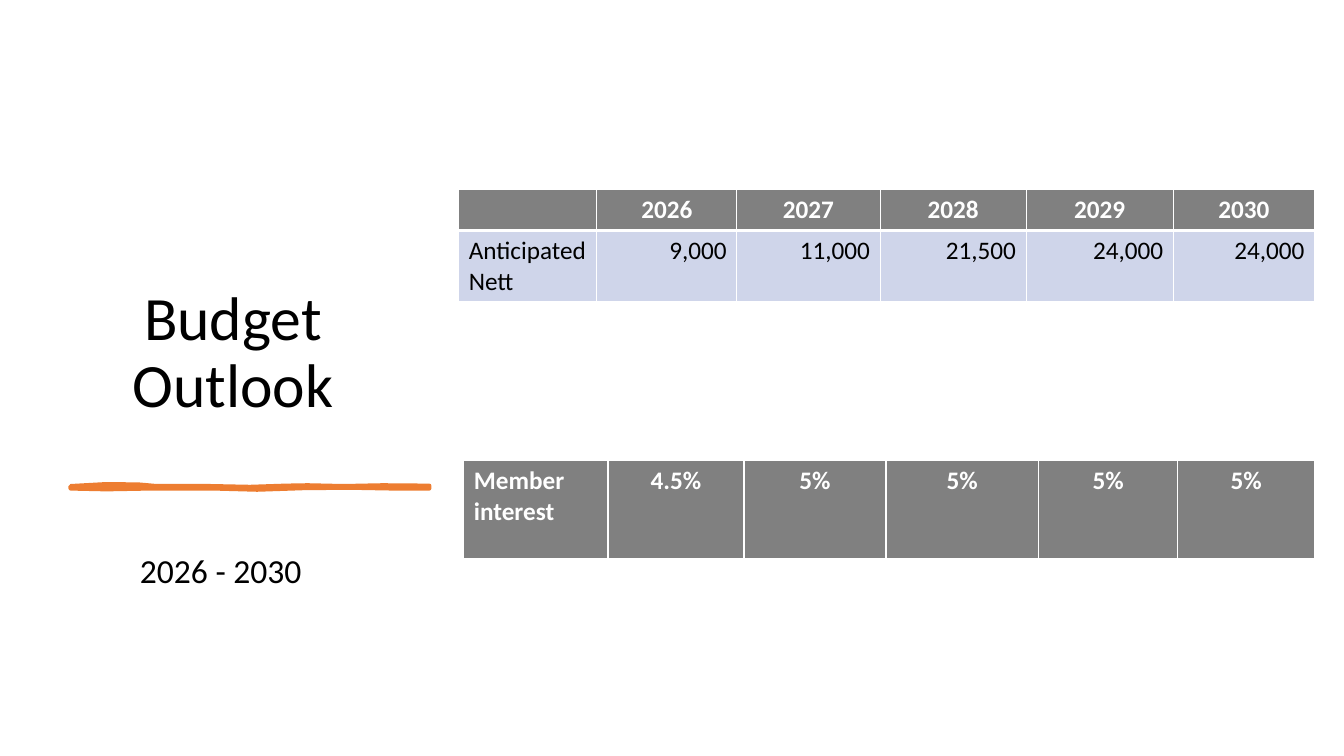
from lxml.etree import SubElement
from pptx import Presentation
from pptx.dml.color import RGBColor
from pptx.enum.text import MSO_ANCHOR, PP_ALIGN
from pptx.oxml.ns import qn
from pptx.util import Cm, Pt

GREY, BLUE, WHITE, BLACK, ORANGE = "808080", "CFD5EA", "FFFFFF", "000000", "ED7D31"
LEFT, MID, RIGHT = PP_ALIGN.LEFT, PP_ALIGN.CENTER, PP_ALIGN.RIGHT


def color(code):
    return RGBColor.from_string(code)


def write(para, text, size, ink, align, bold=False):
    para.alignment = align
    run = para.add_run()
    run.text = text
    font = run.font
    font.name, font.size, font.bold = "Calibri", Pt(size), bold
    font.color.rgb = color(ink)


def label(slide, box, text, size, anchor, lead=1.0):
    frame = slide.shapes.add_textbox(*map(Cm, box)).text_frame
    frame.word_wrap = True
    frame.vertical_anchor = anchor
    para = frame.paragraphs[0]
    para.line_spacing = lead
    write(para, text, size, BLACK, MID)


def stroke(slide, box):
    left, top, width, height = box
    upper = [(0, 0.2), (0.1, -0.4), (0.19, -0.2), (0.24, 0.2), (0.39, 0.2), (0.5, 0.5),
             (0.6, 0.1), (0.66, 0), (0.76, 0.3), (0.87, 0), (1, 0.1)]
    lower = [(1, 1), (0.9, 1), (0.78, 0.8), (0.65, 0.9), (0.52, 1.4), (0.4, 1),
             (0.22, 1), (0.1, 1.2), (0, 1)]
    dots = [((left + x * width) * 100, (top + y * height) * 100) for x, y in upper + lower]
    pen = slide.shapes.build_freeform(*dots[0], scale=3600)
    pen.add_line_segments(dots[1:], close=True)
    shape = pen.convert_to_shape()
    shape.shadow.inherit = False
    shape.fill.solid()
    shape.fill.fore_color.rgb = color(ORANGE)
    shape.line.color.rgb = color(ORANGE)
    shape.line.width = Pt(3)


def border(cell, base):
    props = cell._tc.get_or_add_tcPr()
    for spot, (side, width) in enumerate([("L", 1), ("R", 1), ("T", 1), ("B", base)]):
        line = SubElement(props, qn(f"a:ln{side}"), w=str(Pt(width)))
        fill = SubElement(line, qn("a:solidFill"))
        SubElement(fill, qn("a:srgbClr"), val=WHITE)
        props.insert(spot, line)


def grid(slide, box, cols, rows):
    frame = slide.shapes.add_table(len(rows), len(cols), *map(Cm, box))
    table = frame.table
    table.first_row = table.horz_banding = False
    for col, width in zip(table.columns, cols):
        col.width = Cm(width)
    for r, (height, fill, ink, bold, align, base, texts) in enumerate(rows):
        table.rows[r].height = Cm(height)
        for c, text in enumerate(texts):
            cell = table.cell(r, c)
            cell.fill.solid()
            cell.fill.fore_color.rgb = color(fill)
            border(cell, base)
            frame = cell.text_frame
            for n, part in enumerate(text.split("\n") if text else []):
                para = frame.add_paragraph() if n else frame.paragraphs[0]
                write(para, part, 18, ink, align if c else LEFT, bold)


def heading(slide, left, top):
    label(slide, (left, top, 9.93, 9.93), "Budget Outlook", 44, MSO_ANCHOR.BOTTOM, 0.9)
    stroke(slide, (left + 0.87, top + 11.44, 9.04, 0.08))
    label(slide, (left + 1.48, top + 12.95, 6.35, 1.27), "2026 - 2030", 24, MSO_ANCHOR.TOP)


def tables(slide, left, top):
    years = [""] + [str(year) for year in range(2026, 2031)]
    nett = ["Anticipated\nNett", "9,000", "11,000", "21,500", "24,000", "24,000"]
    rates = ["Member interest", "4.5%"] + ["5%"] * 4
    grid(slide, (left, top, 21.57, 2.8), [3.48, 3.53, 3.61, 3.68, 3.71, 3.56],
         [(1.03, GREY, WHITE, True, MID, 3, years),
          (1.77, BLUE, BLACK, False, RIGHT, 1, nett)])
    grid(slide, (left + 0.13, top + 6.83, 21.44, 2.49), [3.63, 3.43, 3.58, 3.84, 3.51, 3.45],
         [(2.49, GREY, WHITE, True, MID, 3, rates)])


def main():
    deck = Presentation()
    deck.slide_width, deck.slide_height = Cm(33.87), Cm(19.05)
    slide = deck.slides.add_slide(deck.slide_layouts[6])
    heading(slide, 0.91, 0.79)
    tables(slide, 11.56, 4.78)
    deck.save("out.pptx")


if __name__ == "__main__":
    main()
